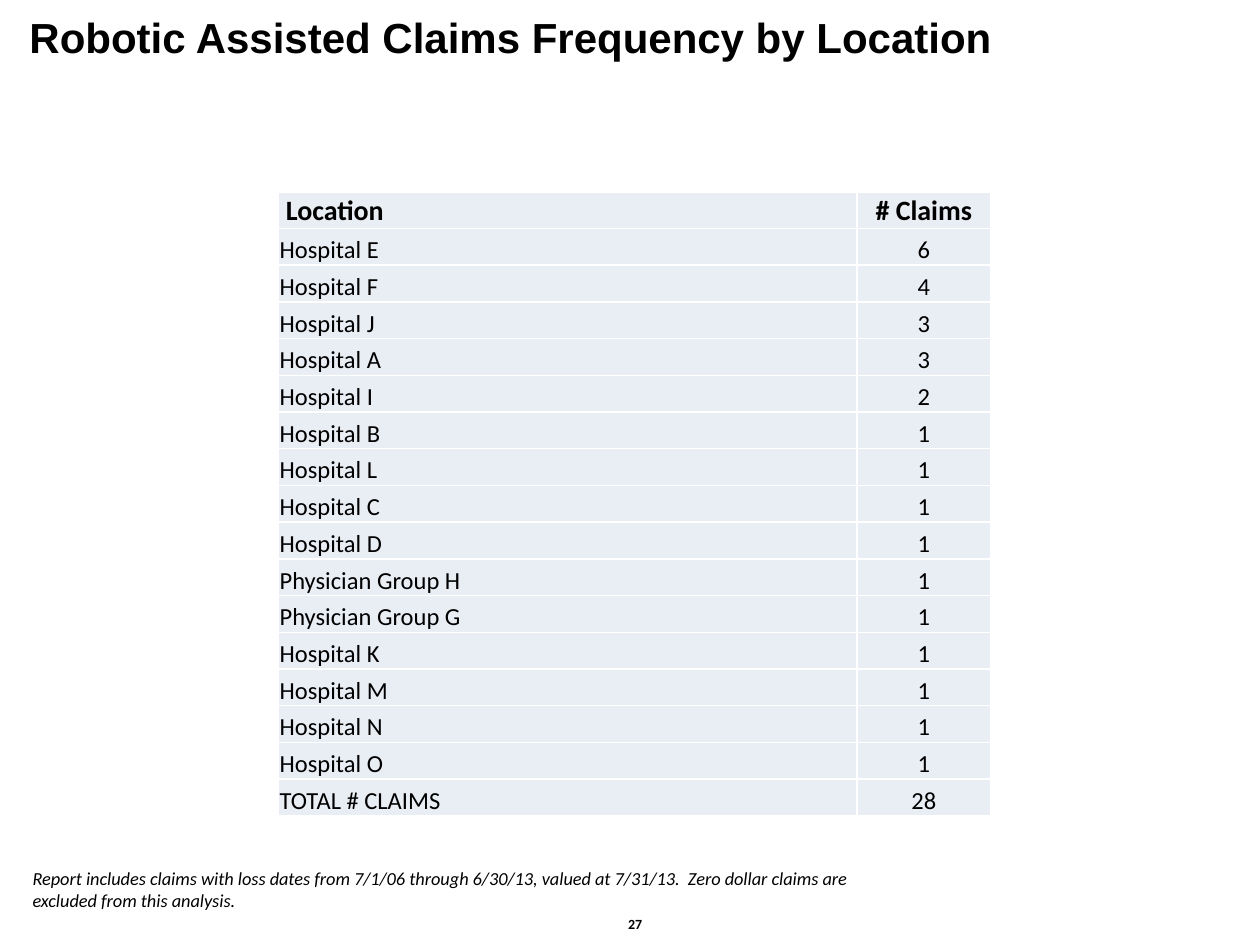
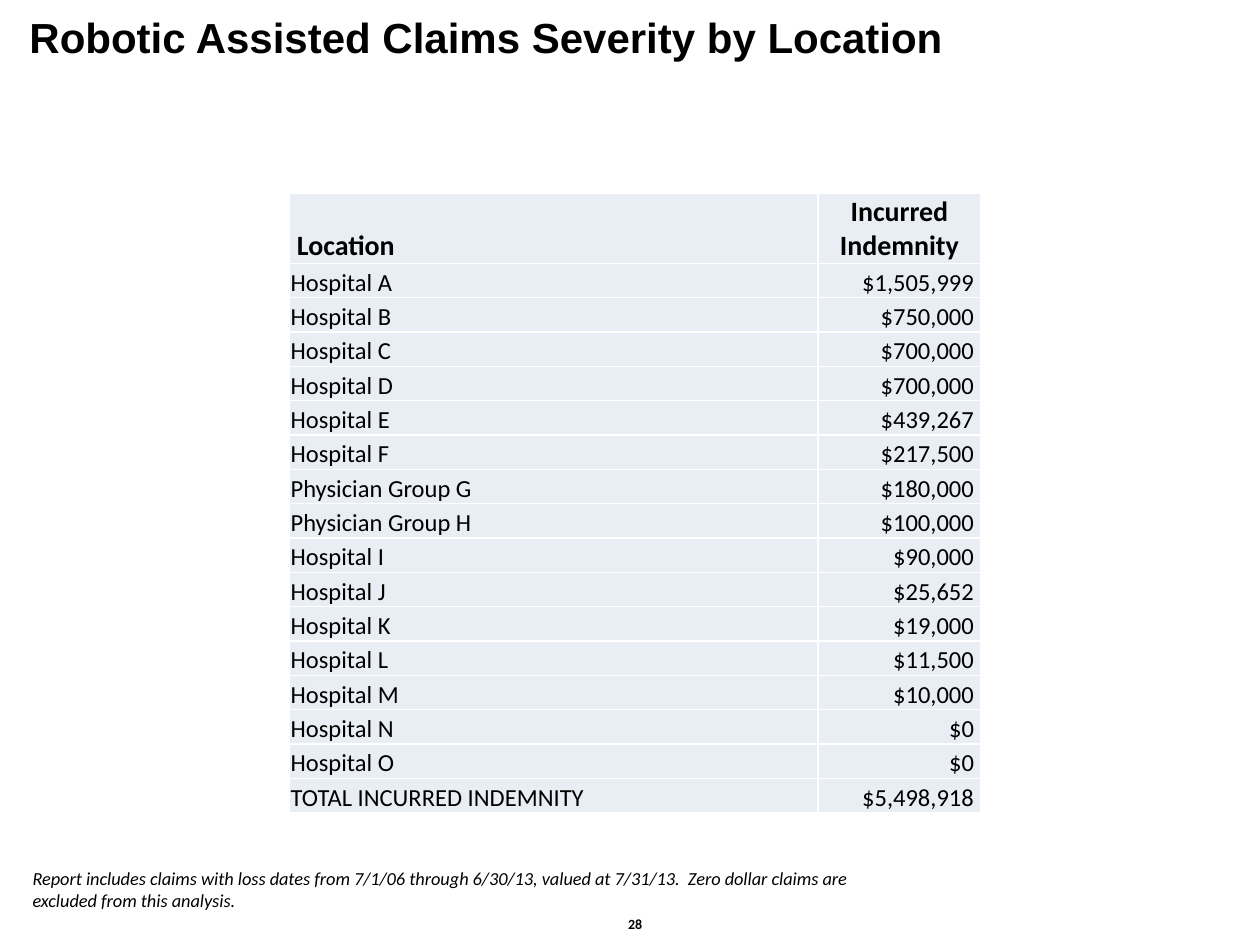
import pptx
import pptx.dml.color
import pptx.enum.text
import pptx.oxml
import pptx.oxml.ns
import pptx.util

Pt = pptx.util.Pt
RGB = pptx.dml.color.RGBColor
ALIGN = pptx.enum.text.PP_ALIGN
ANCHOR = pptx.enum.text.MSO_ANCHOR

BLACK = RGB(0, 0, 0)
WHITE = RGB(255, 255, 255)
PALE = RGB(0xE9, 0xED, 0xF4)

HEADING = {"name": "Arial", "size": Pt(24), "bold": True}
HEAD = {"name": "Calibri", "size": Pt(16), "bold": True}
BODY = {"name": "Calibri", "size": Pt(14), "bold": False}
NOTE = {"name": "Calibri", "size": Pt(10.5), "italic": True}
PAGE = {"name": "Calibri", "size": Pt(8), "bold": True}

TITLE_BOX = (9.6, 3.2, 700, 36)
NOTE_BOX = (11.5, 491.8, 502, 32.4)
PAGE_BOX = (288, 519.8, 150, 18)

NOTE_TEXT = ("Report includes claims with loss dates from 7/1/06 through 6/30/13, "
             "valued at 7/31/13.  Zero dollar claims are excluded from this analysis.")

COUNTS = [
    ("Hospital E", "6"), ("Hospital F", "4"), ("Hospital J", "3"),
    ("Hospital A", "3"), ("Hospital I", "2"), ("Hospital B", "1"),
    ("Hospital L", "1"), ("Hospital C", "1"), ("Hospital D", "1"),
    ("Physician Group H", "1"), ("Physician Group G", "1"),
    ("Hospital K", "1"), ("Hospital M", "1"), ("Hospital N", "1"),
    ("Hospital O", "1"), ("TOTAL # CLAIMS", "28"),
]
COSTS = [
    ("Hospital A", "$1,505,999"), ("Hospital B", "$750,000"),
    ("Hospital C", "$700,000"), ("Hospital D", "$700,000"),
    ("Hospital E", "$439,267"), ("Hospital F", "$217,500"),
    ("Physician Group G", "$180,000"), ("Physician Group H", "$100,000"),
    ("Hospital I", "$90,000"), ("Hospital J", "$25,652"),
    ("Hospital K", "$19,000"), ("Hospital L", "$11,500"),
    ("Hospital M", "$10,000"), ("Hospital N", "$0"), ("Hospital O", "$0"),
    ("TOTAL INCURRED INDEMNITY", "$5,498,918"),
]
SLIDES = [
    {"title": "Robotic Assisted Claims Frequency by Location", "page": "27",
     "table": {"box": (159.1, 109.6, 407, 357), "heads": ("Location", "# Claims"),
               "rows": COUNTS, "last": 76.3, "top": 21, "align": ALIGN.CENTER}},
    {"title": "Robotic Assisted Claims Severity by Location", "page": "28",
     "table": {"box": (165.4, 110.7, 395.2, 353),
               "heads": ("Location", "Incurred Indemnity"),
               "rows": COSTS, "last": 93.2, "top": 39, "align": ALIGN.RIGHT}},
]


def apply(obj, form):
    for key, value in form.items():
        setattr(obj, key, value)


def write(frame, text, form, align=ALIGN.LEFT):
    """Fill a text frame with one formatted paragraph."""
    frame.text = text
    frame.word_wrap = True
    para = frame.paragraphs[0]
    para.alignment = align
    apply(para.font, form)
    para.font.color.rgb = BLACK


def add_title(slide, box, text):
    shape = slide.shapes.title
    apply(shape, dict(zip(("left", "top", "width", "height"), map(Pt, box))))
    write(shape.text_frame, text, HEADING)
    apply(shape.text_frame, {"vertical_anchor": ANCHOR.TOP,
                             "auto_size": pptx.enum.text.MSO_AUTO_SIZE.NONE})


def add_text(slide, box, text, form, align=ALIGN.LEFT):
    frame = slide.shapes.add_textbox(*map(Pt, box)).text_frame
    write(frame, text, form, align)


def add_edges(cell):
    props = cell._tc.get_or_add_tcPr()
    for spot, side in enumerate("LRTB"):
        props.insert(spot, pptx.oxml.parse_xml(
            f'<a:ln{side} {pptx.oxml.ns.nsdecls("a")} w="{Pt(1)}"><a:solidFill>'
            f'<a:srgbClr val="{WHITE}"/></a:solidFill></a:ln{side}>'))


def set_cell(cell, text, form, align, left=0.7, right=0.7):
    apply(cell, {"margin_left": Pt(left), "margin_right": Pt(right),
                 "margin_top": Pt(0.7), "margin_bottom": Pt(0),
                 "vertical_anchor": ANCHOR.BOTTOM})
    write(cell.text_frame, text, form, align)
    cell.fill.solid()
    cell.fill.fore_color.rgb = PALE
    add_edges(cell)


def add_claims(slide, box, heads, rows, last, top, align):
    """Draw a location table; last is the value column width, top the head height."""
    grid = slide.shapes.add_table(len(rows) + 1, 2, *map(Pt, box)).table
    apply(grid, {"first_row": False, "horz_banding": False})
    for col, width in zip(grid.columns, (box[2] - last, last)):
        col.width = Pt(width)
    step = (box[3] - top) / len(rows)
    for num, row in enumerate(grid.rows):
        row.height = Pt(step if num else top)
    set_cell(grid.cell(0, 0), heads[0], HEAD, ALIGN.LEFT, left=4.3)
    set_cell(grid.cell(0, 1), heads[1], HEAD, ALIGN.CENTER)
    pad = 4 if align == ALIGN.RIGHT else 0.7
    for num, (place, value) in enumerate(rows, 1):
        set_cell(grid.cell(num, 0), place, BODY, ALIGN.LEFT)
        set_cell(grid.cell(num, 1), value, BODY, align, right=pad)


def main():
    deck = pptx.Presentation()
    apply(deck, {"slide_width": Pt(720), "slide_height": Pt(540)})
    for item in SLIDES:
        slide = deck.slides.add_slide(deck.slide_layouts[5])
        add_title(slide, TITLE_BOX, item["title"])
        add_claims(slide, **item["table"])
        add_text(slide, NOTE_BOX, NOTE_TEXT, NOTE)
        add_text(slide, PAGE_BOX, item["page"], PAGE, ALIGN.CENTER)
    deck.save("out.pptx")


if __name__ == "__main__":
    main()
